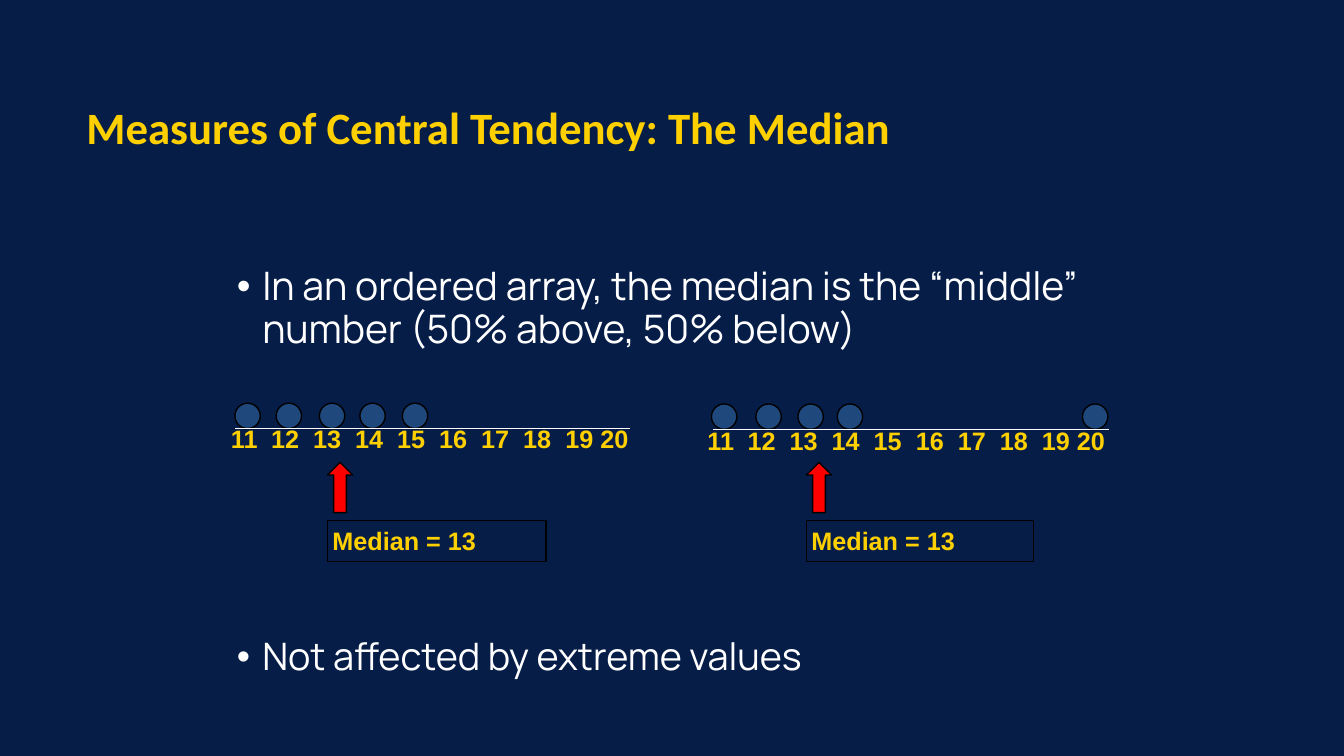
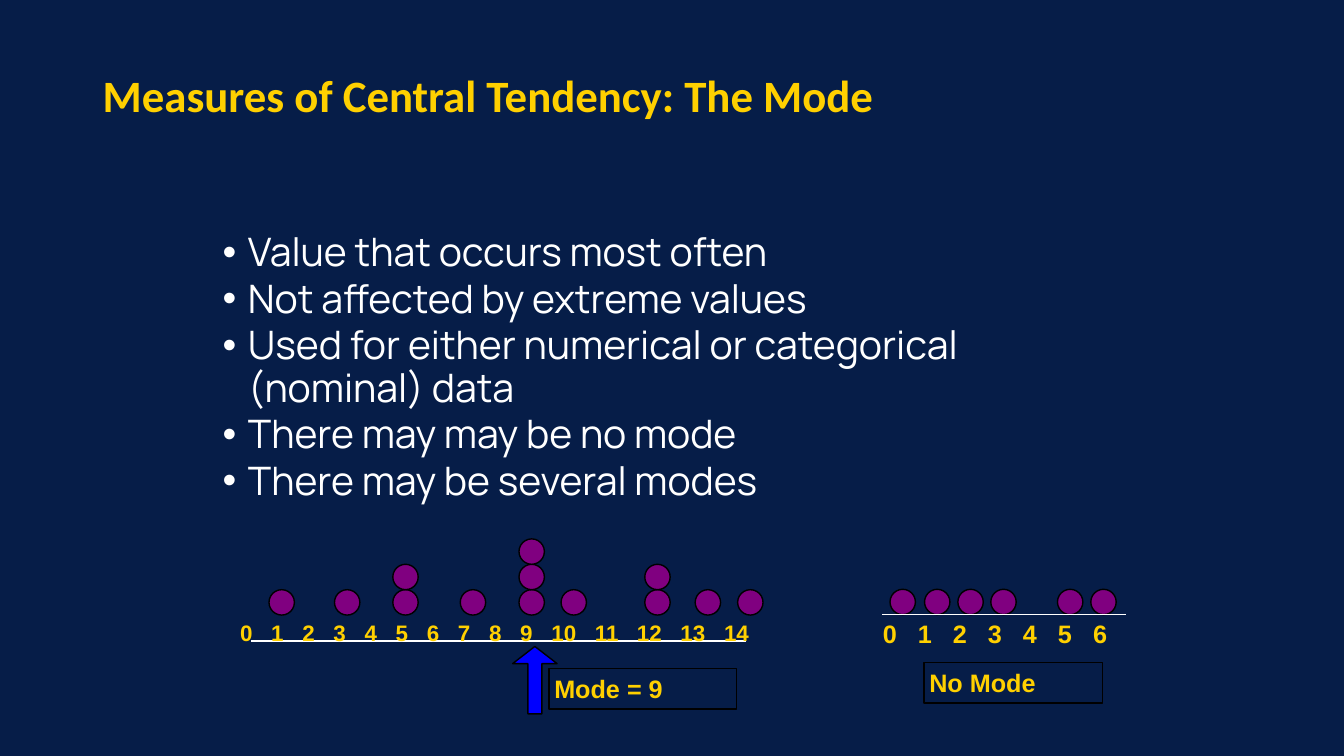
from dataclasses import dataclass

from lxml.etree import SubElement
from pptx import Presentation
from pptx.dml.color import RGBColor
from pptx.enum.shapes import MSO_CONNECTOR, MSO_SHAPE
from pptx.enum.text import MSO_ANCHOR as Anchor, PP_ALIGN as Align
from pptx.oxml.ns import qn
from pptx.util import Cm, Pt

NAVY, GOLD, WHITE, BLACK = "061D48", "FFD000", "FFFFFF", "000000"
STEEL, PURPLE, RED, BLUE = "1F497D", "800080", "FF0000", "0000FF"
TITLE_FONT, BODY_FONT, LABEL_FONT = "Calibri", "Manrope", "Arial"
DOT = 0.64
SMALL_INSET = 0.13
# Widths of Arial characters, in parts of the type size
DIGIT, SPACE, KERN_11 = 0.556, 0.278, 0.074


@dataclass
class DotPlot:
    """A number line; offsets are in cm from its left end."""
    left: float
    top: float
    width: float
    labels: range
    label_offset: tuple
    dots: dict  # offset of a stack -> number of dots
    colour: str
    gap: int = 3  # spaces between labels
    last_gap: int = 3
    size: int = 18
    dot_floor: float = 0


def rgb(colour):
    return RGBColor.from_string(colour)


def format_runs(para, font, size, colour, bold=False):
    for span in para.runs:
        span.font.name = font
        span.font.size = Pt(size)
        span.font.bold = bold
        span.font.color.rgb = rgb(colour)


def set_insets(frame, inset):
    frame.margin_left = frame.margin_right = Cm(inset)
    frame.margin_top = frame.margin_bottom = Cm(inset)


def add_text_box(page, left, top, width, height):
    box = page.shapes.add_textbox(Cm(left), Cm(top), Cm(width), Cm(height))
    box.text_frame.word_wrap = True
    return box.text_frame


def add_outlined(page, kind, left, top, width, height, fill=None):
    """Add a preset shape with a thin black outline."""
    shape = page.shapes.add_shape(kind, Cm(left), Cm(top), Cm(width), Cm(height))
    shape.shadow.inherit = False
    shape.line.color.rgb = rgb(BLACK)
    shape.line.width = Pt(1)
    if fill:
        shape.fill.solid()
        shape.fill.fore_color.rgb = rgb(fill)
    else:
        shape.fill.background()
    return shape


def add_title(page, text, left, top, width, height):
    frame = add_text_box(page, left, top, width, height)
    frame.vertical_anchor = Anchor.MIDDLE
    frame.text = text
    para = frame.paragraphs[0]
    para.line_spacing = 0.9
    format_runs(para, TITLE_FONT, 32, GOLD, bold=True)


def add_bullets(page, items, left, top, width, height, size=28):
    frame = add_text_box(page, left, top, width, height)
    frame.text = "\n".join(items)
    for index, para in enumerate(frame.paragraphs):
        properties = para._p.get_or_add_pPr()
        properties.set("marL", str(Cm(0.64)))
        properties.set("indent", str(Cm(-0.64)))
        SubElement(properties, qn("a:buFont")).set("typeface", "Arial")
        SubElement(properties, qn("a:buChar")).set("char", "•")
        para.line_spacing = 0.9
        if index:
            para.space_before = Pt(3)
        format_runs(para, BODY_FONT, size, WHITE)


def add_axis(page, left, top, width):
    axis = page.shapes.add_connector(
        MSO_CONNECTOR.STRAIGHT, Cm(left), Cm(top), Cm(left + width), Cm(top))
    axis.line.color.rgb = rgb(WHITE)
    axis.line.width = Pt(1)
    SubElement(axis._element.spPr, qn("a:effectLst"))


def add_axis_labels(page, plot):
    """Set the numbers in one line, each at its own tab stop."""
    dx, dy = plot.label_offset
    frame = add_text_box(page, plot.left + dx, plot.top + dy, plot.width + 1, 1)
    set_insets(frame, SMALL_INSET)
    labels = [str(number) for number in plot.labels]
    frame.text = "\t".join(labels)
    para = frame.paragraphs[0]
    tabs = SubElement(para._p.get_or_add_pPr(), qn("a:tabLst"))
    position = 0
    for index, label in enumerate(labels[:-1]):
        gap = plot.last_gap if index == len(labels) - 2 else plot.gap
        position += len(label) * DIGIT + gap * SPACE
        if label == "11":
            position -= KERN_11
        tab = SubElement(tabs, qn("a:tab"))
        tab.set("pos", str(Pt(position * plot.size)))
        tab.set("algn", "l")
    format_runs(para, LABEL_FONT, plot.size, GOLD, bold=True)


def add_dot_plot(page, plot):
    floor = plot.top + plot.dot_floor
    for offset, count in plot.dots.items():
        for level in range(1, count + 1):
            add_outlined(page, MSO_SHAPE.OVAL, plot.left + offset,
                         floor - level * DOT, DOT, DOT, plot.colour)
    add_axis(page, plot.left, plot.top, plot.width)
    add_axis_labels(page, plot)


def add_up_arrow(page, left, top, width, height, colour, shaft, head):
    arrow = add_outlined(page, MSO_SHAPE.UP_ARROW, left, top, width, height, colour)
    arrow.adjustments[0] = shaft
    arrow.adjustments[1] = head


def add_callout(page, text, left, top, width):
    frame = add_outlined(page, MSO_SHAPE.RECTANGLE, left, top, width, 1.03).text_frame
    set_insets(frame, SMALL_INSET)
    frame.word_wrap = True
    frame.vertical_anchor = Anchor.TOP
    frame.text = text
    para = frame.paragraphs[0]
    para.alignment = Align.LEFT
    format_runs(para, LABEL_FONT, 18, GOLD, bold=True)


def build_median(page):
    add_title(page, "Measures of Central Tendency: The Median", 1.93, 1.68, 23.67, 3.18)
    add_bullets(page, ["In an ordered array, the median is the “middle” "
                       "number (50% above, 50% below)"], 5.72, 6.6, 23.29, 2.5)
    add_bullets(page, ["Not affected by extreme values"], 5.72, 15.96, 23.29, 1.4, size=27)

    shared = dict(width=9.96, labels=range(11, 21), colour=STEEL, gap=2, last_gap=1)
    stacks = [(0, 1.04, 2.13, 3.15, 4.22), (-0.05, 1.07, 2.13, 3.12, 9.3)]
    add_dot_plot(page, DotPlot(5.92, 10.8, label_offset=(-0.23, -0.26),
                               dots=dict.fromkeys(stacks[0], 1), **shared))
    add_dot_plot(page, DotPlot(17.98, 10.82, label_offset=(-0.28, -0.23),
                               dots=dict.fromkeys(stacks[1], 1), **shared))
    for left, width in ((8.25, 5.51), (20.32, 5.72)):
        add_up_arrow(page, left, 11.65, 0.64, 1.27, RED, 0.5, 0.5)
        add_callout(page, "Median = 13", left, 13.12, width)


def build_mode(page):
    add_title(page, "Measures of Central Tendency: The Mode", 2.34, 1.09, 23.65, 2.74)
    add_bullets(page, [
        "Value that occurs most often",
        "Not affected by extreme values",
        "Used for either numerical or categorical (nominal) data",
        "There may may be no mode",
        "There may be several modes",
    ], 5.36, 5.74, 22.86, 7.5)

    add_dot_plot(page, DotPlot(
        6.32, 16.15, 12.48, range(15), (-0.4, -0.68),
        {0.46: 1, 2.11: 1, 3.58: 2, 5.28: 1, 6.76: 3, 7.82: 1,
         9.93: 2, 11.2: 1, 12.27: 1},
        PURPLE, size=16, dot_floor=-0.65))
    add_callout(page, "Mode = 9", 13.84, 16.84, 4.72)
    add_up_arrow(page, 12.92, 16.29, 1.12, 1.7, BLUE, 0.315, 0.387)

    add_dot_plot(page, DotPlot(
        22.23, 15.49, 6.14, range(7), (-0.11, -0.05),
        dict.fromkeys((0.2, 1.07, 1.91, 2.74, 4.42, 5.26), 1), PURPLE))
    add_callout(page, "No Mode", 23.29, 16.69, 4.5)


def main():
    deck = Presentation()
    deck.slide_width, deck.slide_height = Cm(33.87), Cm(19.05)
    backdrop = deck.slide_master.background.fill
    backdrop.solid()
    backdrop.fore_color.rgb = rgb(NAVY)
    for build in (build_median, build_mode):
        build(deck.slides.add_slide(deck.slide_layouts[6]))
    deck.save("out.pptx")


if __name__ == "__main__":
    main()
